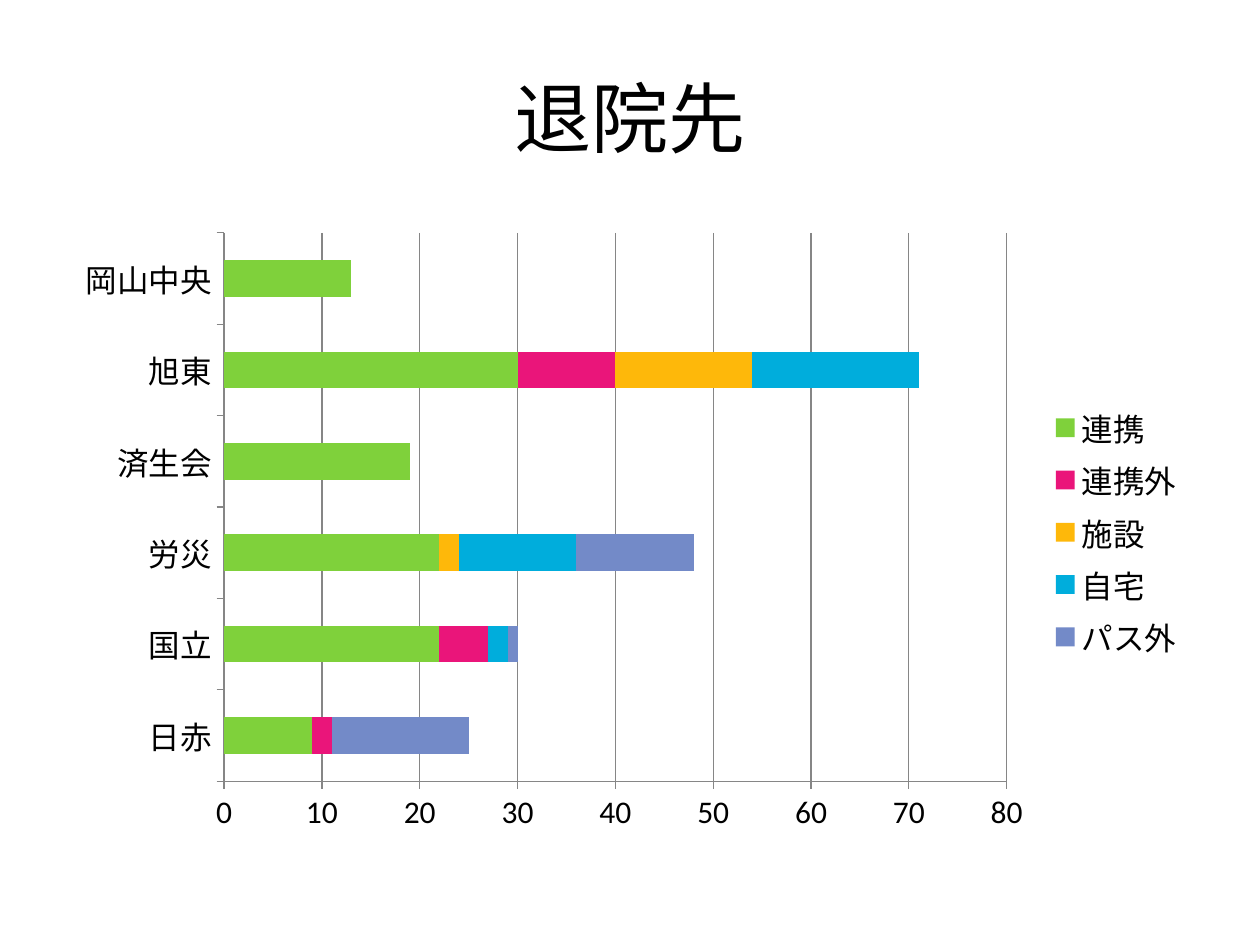
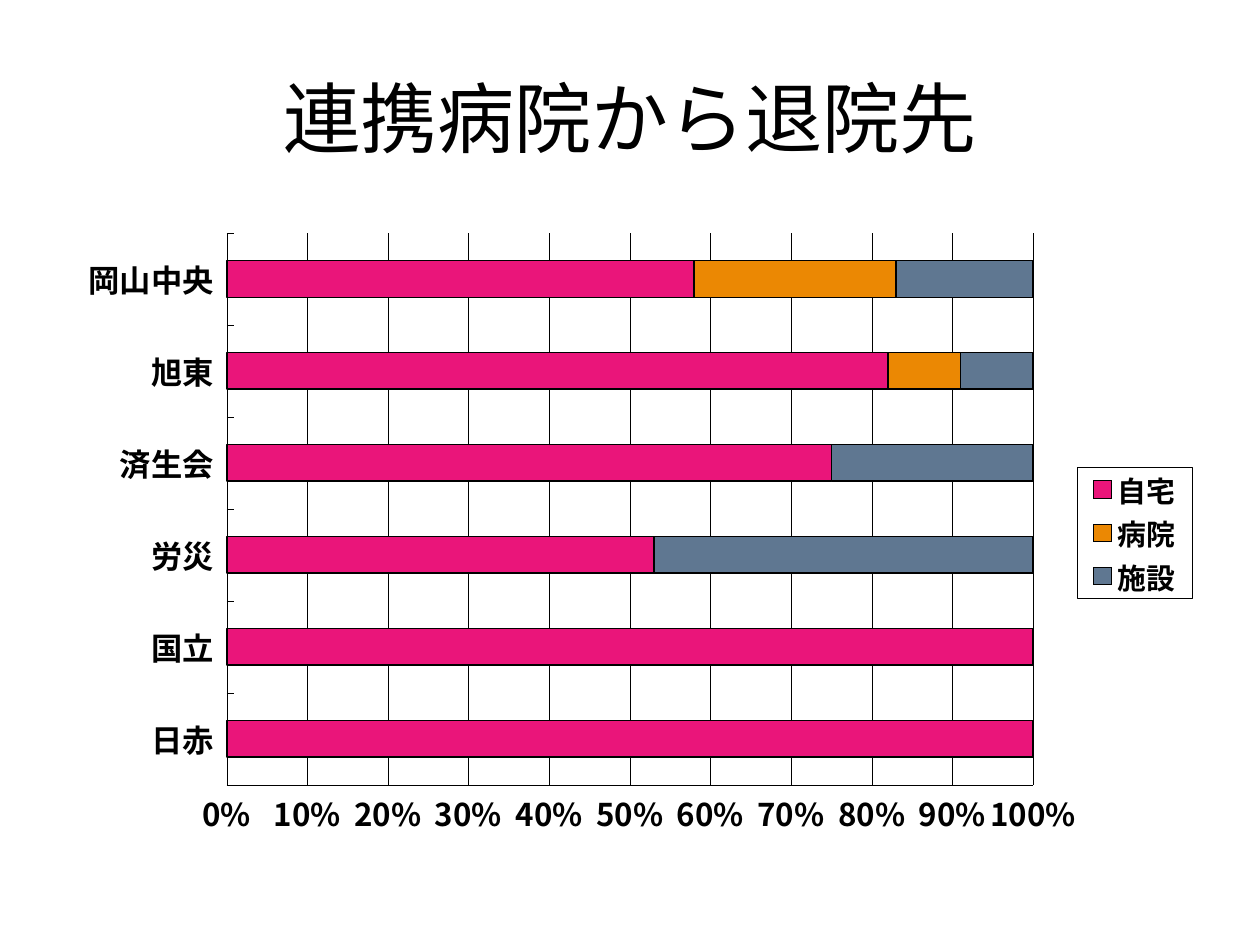
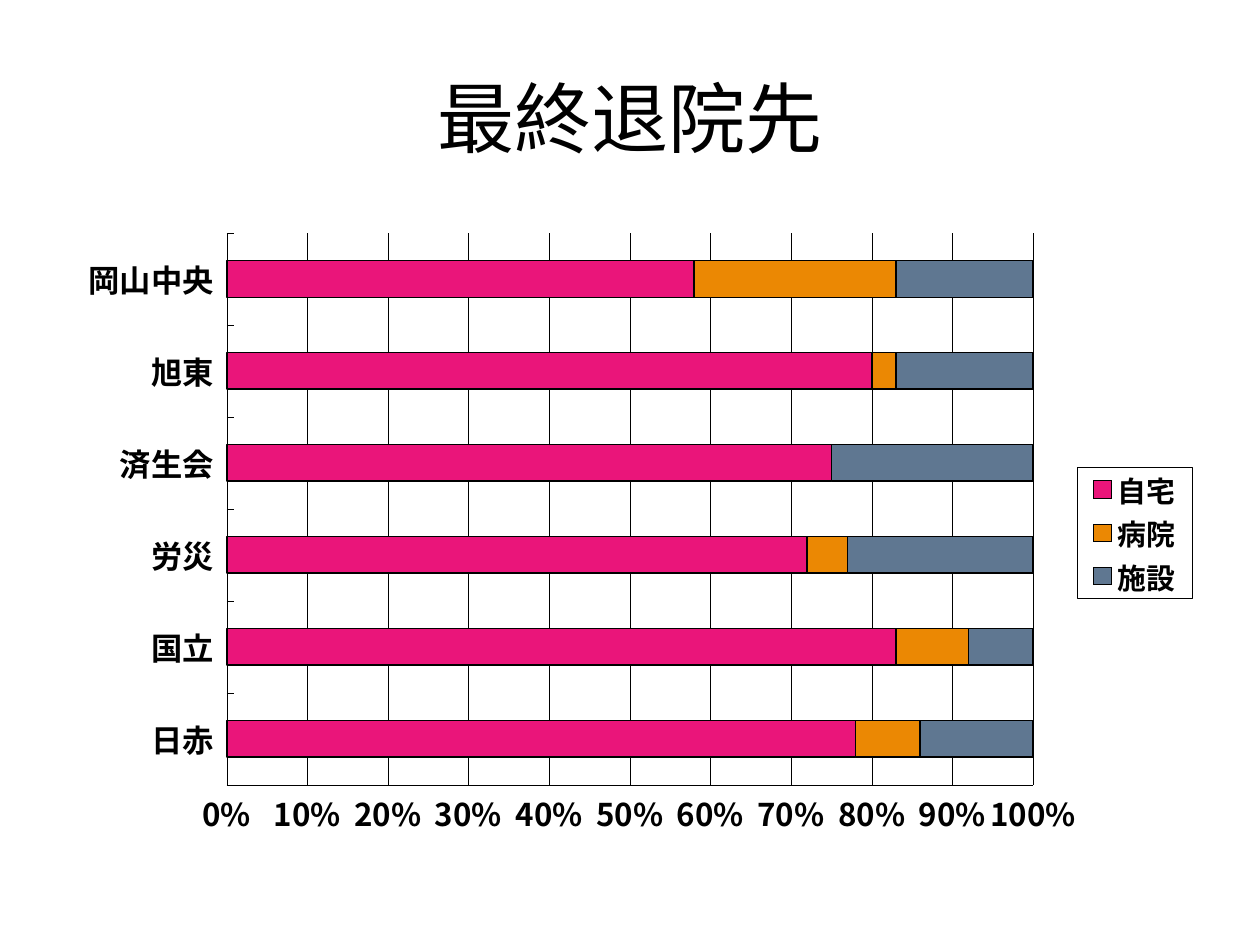
from dataclasses import dataclass
from typing import Optional

from lxml.etree import Element, SubElement
from pptx import Presentation
from pptx.chart.chart import Chart
from pptx.chart.data import CategoryChartData
from pptx.dml.color import RGBColor
from pptx.dml.line import LineFormat
from pptx.enum.chart import XL_CHART_TYPE as ChartType
from pptx.enum.chart import XL_LEGEND_POSITION as LegendPosition
from pptx.enum.chart import XL_TICK_LABEL_POSITION as LabelPosition
from pptx.enum.chart import XL_TICK_MARK as TickMark
from pptx.enum.text import MSO_ANCHOR, PP_ALIGN
from pptx.oxml.ns import qn
from pptx.slide import Slide
from pptx.text.text import Font
from pptx.util import Inches, Length, Pt

BLACK = RGBColor(0x00, 0x00, 0x00)
WHITE = RGBColor(0xFF, 0xFF, 0xFF)
GRAY = RGBColor(0x86, 0x86, 0x86)
GREEN = RGBColor(0x7F, 0xD1, 0x3B)
PINK = RGBColor(0xEA, 0x15, 0x7A)
YELLOW = RGBColor(0xFE, 0xB8, 0x0A)
CYAN = RGBColor(0x00, 0xAD, 0xDC)
PERIWINKLE = RGBColor(0x73, 0x8A, 0xC8)
ORANGE = RGBColor(0xEB, 0x88, 0x03)
SLATE = RGBColor(0x5F, 0x77, 0x91)

LATIN_FONT = "Calibri"
JAPANESE_FONT = "Noto Sans CJK JP"
HOSPITALS = ("日赤", "国立", "労災", "済生会", "旭東", "岡山中央")


@dataclass(frozen=True)
class Box:
    left: Length
    top: Length
    width: Length
    height: Length


TITLE_BOX = Box(Inches(0.5), Inches(0.3), Inches(9), Inches(1.25))
CHART_BOX = Box(Inches(0.5), Inches(1.75), Inches(9), Inches(4.95))
# Measured from the top left corner of the chart.
PLOT_BOX = Box(Inches(1.3), Inches(0.1), Inches(6.4), Inches(4.38))
LEGEND_BOX = Box(Inches(8.05), Inches(1.96), Inches(0.91), Inches(1.04))


@dataclass(frozen=True)
class Destination:
    name: str
    color: RGBColor
    values: tuple[Optional[int], ...]


@dataclass(frozen=True)
class ChartStyle:
    chart_type: ChartType
    font_name: str
    size: Length
    legend_size: Length
    bold: bool
    tick_mark: TickMark
    line_color: RGBColor
    line_width: Length
    number_format: str
    maximum: float
    major_unit: float
    outlined: bool


COUNT_STYLE = ChartStyle(
    ChartType.BAR_STACKED, LATIN_FONT, Pt(18), Pt(18), False,
    TickMark.OUTSIDE, GRAY, Pt(0.75), "General", 80, 10, outlined=False)
SHARE_STYLE = ChartStyle(
    ChartType.BAR_STACKED_100, JAPANESE_FONT, Pt(17.9), Pt(16.5), True,
    TickMark.INSIDE, BLACK, Pt(0.25), "0%", 1, 0.1, outlined=True)


@dataclass(frozen=True)
class ChartSlide:
    title: str
    style: ChartStyle
    destinations: tuple[Destination, ...]


def share_slide(title: str, home: tuple[int, ...], hospital: tuple[int, ...],
                facility: tuple[int, ...]) -> ChartSlide:
    return ChartSlide(title, SHARE_STYLE, (
        Destination("自宅", PINK, home),
        Destination("病院", ORANGE, hospital),
        Destination("施設", SLATE, facility),
    ))


SLIDES = (
    ChartSlide("退院先", COUNT_STYLE, (
        Destination("連携", GREEN, (9, 22, 22, 19, 30, 13)),
        Destination("連携外", PINK, (2, 5, 0, 0, 10, 0)),
        Destination("施設", YELLOW, (0, 0, 2, 0, 14, 0)),
        Destination("自宅", CYAN, (0, 2, 12, 0, 17, 0)),
        Destination("パス外", PERIWINKLE, (14, 1, 12, None, None, None)),
    )),
    share_slide("連携病院から退院先",
                home=(100, 100, 53, 75, 82, 58),
                hospital=(0, 0, 0, 0, 9, 25),
                facility=(0, 0, 47, 25, 9, 17)),
    share_slide("最終退院先",
                home=(78, 83, 72, 75, 80, 58),
                hospital=(8, 9, 5, 0, 3, 25),
                facility=(14, 8, 23, 25, 17, 17)),
)


def format_font(font: Font, name: str, size: Length, bold: bool) -> None:
    font.name = name
    font.size = size
    font.bold = bold
    font.color.rgb = BLACK


def format_line(line: LineFormat, color: RGBColor, width: Length) -> None:
    line.color.rgb = color
    line.width = width


def add_japanese_font(element: Element) -> None:
    """Name the East Asian typeface beside every Latin one in the element."""
    for latin in list(element.iter(qn("a:latin"))):
        latin.addnext(latin.makeelement(qn("a:ea"), {"typeface": JAPANESE_FONT}))


def build_layout(box: Box, inner: bool) -> Element:
    """Return a manual chart layout, with the box as fractions of the chart."""
    layout = Element(qn("c:layout"))
    manual = SubElement(layout, qn("c:manualLayout"))
    settings = {"layoutTarget": "inner"} if inner else {}
    settings |= {
        "xMode": "edge",
        "yMode": "edge",
        "x": box.left / CHART_BOX.width,
        "y": box.top / CHART_BOX.height,
        "w": box.width / CHART_BOX.width,
        "h": box.height / CHART_BOX.height,
    }
    for name, value in settings.items():
        SubElement(manual, qn(f"c:{name}"), val=str(value))
    return layout


def frame_legend(chart: Chart) -> None:
    """Place the legend and give it a white fill and a thin black border."""
    legend = chart.legend._element
    legend.find(qn("c:legendPos")).addnext(build_layout(LEGEND_BOX, inner=False))
    properties = Element(qn("c:spPr"))
    fill = SubElement(properties, qn("a:solidFill"))
    SubElement(fill, qn("a:srgbClr"), val=str(WHITE))
    line = SubElement(properties, qn("a:ln"), w=str(Pt(0.25)))
    line_fill = SubElement(line, qn("a:solidFill"))
    SubElement(line_fill, qn("a:srgbClr"), val=str(BLACK))
    legend.find(qn("c:txPr")).addprevious(properties)


def format_axes(chart: Chart, style: ChartStyle) -> None:
    for axis in (chart.category_axis, chart.value_axis):
        axis.major_tick_mark = style.tick_mark
        axis.minor_tick_mark = TickMark.NONE
        format_line(axis.format.line, style.line_color, style.line_width)
        format_font(axis.tick_labels.font, style.font_name, style.size, style.bold)
    chart.category_axis.tick_label_position = LabelPosition.LOW
    value_axis = chart.value_axis
    value_axis.minimum_scale = 0
    value_axis.maximum_scale = style.maximum
    value_axis.major_unit = style.major_unit
    value_axis.tick_labels.number_format = style.number_format
    value_axis.tick_labels.number_format_is_linked = False
    value_axis.has_major_gridlines = True
    format_line(value_axis.major_gridlines.format.line,
                style.line_color, style.line_width)


def format_bars(chart: Chart, chart_slide: ChartSlide) -> None:
    plot = chart.plots[0]
    plot.gap_width = 150
    plot.overlap = 100
    plot.vary_by_categories = False
    for series, destination in zip(plot.series, chart_slide.destinations):
        series.invert_if_negative = False
        series.format.fill.solid()
        series.format.fill.fore_color.rgb = destination.color
        if chart_slide.style.outlined:
            format_line(series.format.line, BLACK, Pt(1))
        else:
            series.format.line.fill.background()


def add_destination_chart(slide: Slide, chart_slide: ChartSlide) -> None:
    style = chart_slide.style
    data = CategoryChartData()
    data.categories = HOSPITALS
    for destination in chart_slide.destinations:
        data.add_series(destination.name, destination.values)
    chart = slide.shapes.add_chart(
        style.chart_type, CHART_BOX.left, CHART_BOX.top,
        CHART_BOX.width, CHART_BOX.height, data).chart
    chart.has_title = False
    format_font(chart.font, style.font_name, style.size, style.bold)
    format_axes(chart, style)
    format_bars(chart, chart_slide)

    chart.has_legend = True
    chart.legend.position = LegendPosition.RIGHT
    chart.legend.include_in_layout = False
    format_font(chart.legend.font, style.font_name, style.legend_size, style.bold)
    if style.outlined:
        frame_legend(chart)
        plot_area = chart._chartSpace.chart.plotArea
        for layout in plot_area.findall(qn("c:layout")):
            plot_area.remove(layout)
        plot_area.insert(0, build_layout(PLOT_BOX, inner=True))
    add_japanese_font(chart._chartSpace)


def set_title(slide: Slide, text: str) -> None:
    title = slide.shapes.title
    title.left, title.top = TITLE_BOX.left, TITLE_BOX.top
    title.width, title.height = TITLE_BOX.width, TITLE_BOX.height
    title.text_frame.text = text
    title.text_frame.vertical_anchor = MSO_ANCHOR.MIDDLE
    paragraph = title.text_frame.paragraphs[0]
    paragraph.alignment = PP_ALIGN.CENTER
    format_font(paragraph.runs[0].font, LATIN_FONT, Pt(44), False)
    add_japanese_font(title._element)


def main() -> None:
    presentation = Presentation()
    presentation.slide_width = Inches(10)
    presentation.slide_height = Inches(7.5)
    title_only = presentation.slide_layouts.get_by_name("Title Only")
    for chart_slide in SLIDES:
        slide = presentation.slides.add_slide(title_only)
        set_title(slide, chart_slide.title)
        add_destination_chart(slide, chart_slide)
    presentation.save("out.pptx")


if __name__ == "__main__":
    main()
